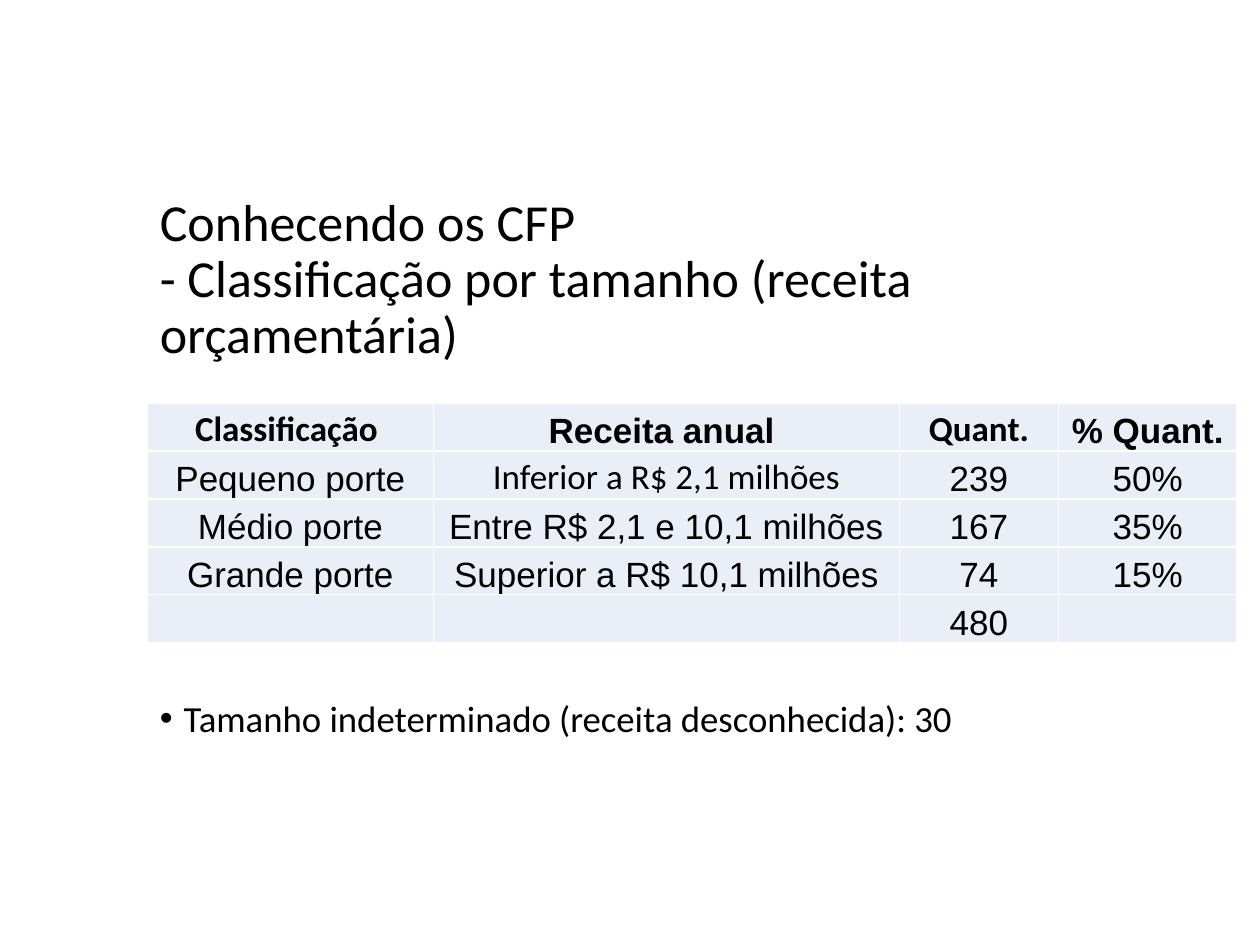
import pptx
import pptx.util
import pptx.dml.color
import pptx.enum.text
import pptx.oxml
import pptx.oxml.ns
from pptx.util import Inches

BLACK = pptx.dml.color.RGBColor(0x00, 0x00, 0x00)
PALE_BLUE = pptx.dml.color.RGBColor(0xEA, 0xEF, 0xF7)
WHITE = pptx.dml.color.RGBColor(0xFF, 0xFF, 0xFF)


def style(paragraph, size, font_name="Calibri", bold=False):
    paragraph.font.size = pptx.util.Pt(size)
    paragraph.font.name = font_name
    paragraph.font.bold = bold
    paragraph.font.color.rgb = BLACK


def add_borders(cell):
    properties = cell._tc.get_or_add_tcPr()
    for position, side in enumerate(("lnL", "lnR", "lnT", "lnB")):
        properties.insert(position, pptx.oxml.parse_xml(
            f'<a:{side} {pptx.oxml.ns.nsdecls("a")} w="12700">'
            f'<a:solidFill><a:srgbClr val="{WHITE}"/></a:solidFill></a:{side}>'))


presentation = pptx.Presentation()
presentation.slide_width = Inches(10)
presentation.slide_height = Inches(7.5)
slide = presentation.slides.add_slide(presentation.slide_layouts[6])

title = slide.shapes.add_textbox(Inches(1.17), Inches(1.47), Inches(6.66), Inches(1.51)).text_frame
title.word_wrap = True
title.vertical_anchor = pptx.enum.text.MSO_ANCHOR.MIDDLE
heading = title.paragraphs[0]
heading.text = "Conhecendo os CFP\v- Classificação por tamanho (receita orçamentária)"
heading.line_spacing = 0.9
style(heading, 29.7)

remark = slide.shapes.add_textbox(Inches(1.17), Inches(5.51), Inches(8.14), Inches(0.45)).text_frame
remark.word_wrap = True
unknown_size = remark.paragraphs[0]
unknown_size.text = "Tamanho indeterminado (receita desconhecida): 30"
unknown_size.line_spacing = 0.9
indent = unknown_size._p.get_or_add_pPr()
indent.set("marL", str(Inches(0.19)))
indent.set("indent", str(-Inches(0.19)))
for bullet in ('buFont %s typeface="Arial"', 'buChar %s char="•"'):
    indent.append(pptx.oxml.parse_xml(f"<a:{bullet % pptx.oxml.ns.nsdecls('a')}/>"))
style(unknown_size, 21)

size_classes = [
    ["Classificação ", "Receita anual ", "Quant.", "% Quant."],
    ["Pequeno porte", "Inferior a R$ 2,1 milhões", "239", "50%"],
    ["Médio porte", "Entre R$ 2,1 e 10,1 milhões", "167", "35%"],
    ["Grande porte", "Superior a R$ 10,1 milhões", "74", "15%"],
    ["", "", "480", ""],
]
calibri_cells = {(0, 0), (0, 2), (1, 1)}
table = slide.shapes.add_table(5, 4, Inches(1.17), Inches(3.2), Inches(8.65), Inches(1.89)).table
for column, width in zip(table.columns, (2.27, 3.7, 1.26, 1.42)):
    column.width = Inches(width)
for r, values in enumerate(size_classes):
    table.rows[r].height = Inches(0.38)
    for c, value in enumerate(values):
        cell = table.cell(r, c)
        cell.fill.solid()
        cell.fill.fore_color.rgb = PALE_BLUE
        add_borders(cell)
        cell.margin_left = cell.margin_right = cell.margin_top = Inches(0.01)
        cell.margin_bottom = 0
        cell.vertical_anchor = pptx.enum.text.MSO_ANCHOR.BOTTOM
        entry = cell.text_frame.paragraphs[0]
        entry.text = value
        entry.alignment = pptx.enum.text.PP_ALIGN.CENTER
        style(entry, 20, "Calibri" if (r, c) in calibri_cells else "Arial", r == 0)

presentation.save("out.pptx")
